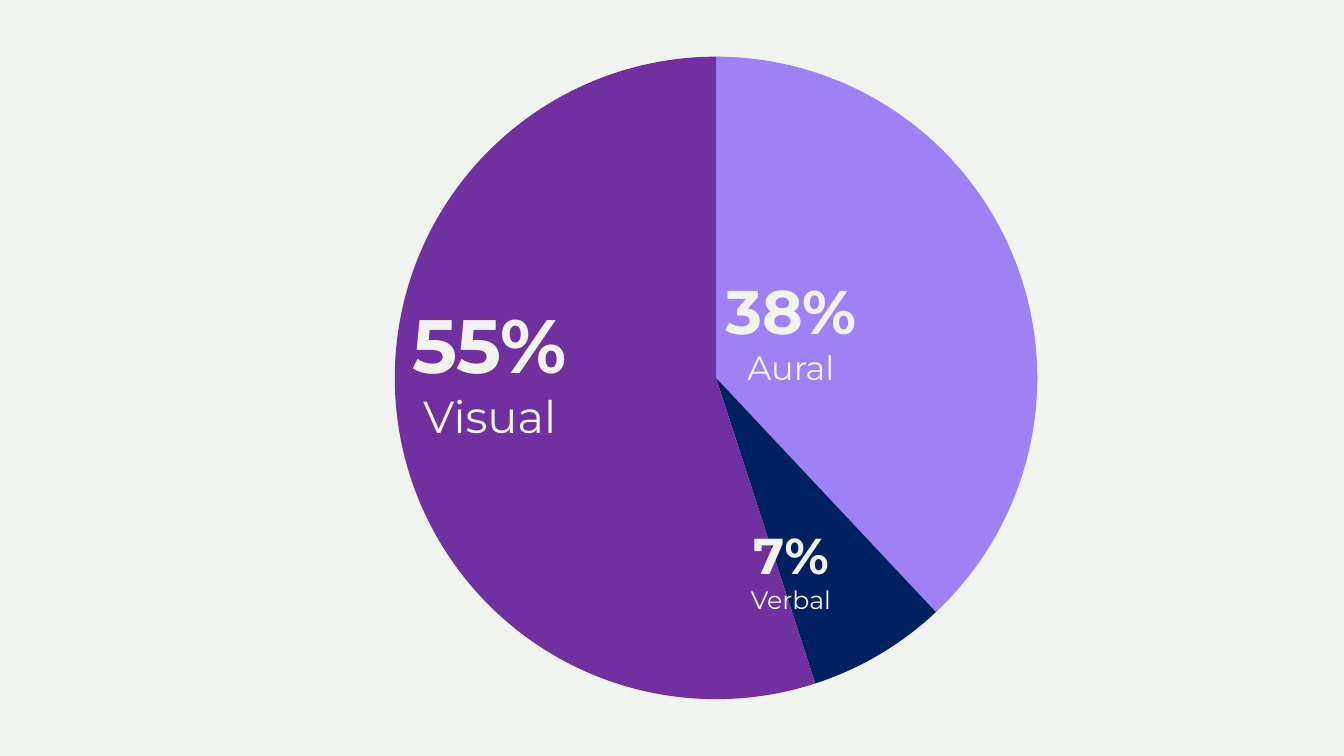
from dataclasses import dataclass

from lxml.etree import SubElement
from pptx import Presentation
from pptx.chart.data import CategoryChartData
from pptx.dml.color import RGBColor
from pptx.enum.chart import XL_CHART_TYPE
from pptx.enum.text import MSO_AUTO_SIZE, PP_ALIGN
from pptx.oxml.ns import qn
from pptx.util import Pt


@dataclass(frozen=True)
class Theme:
    light: str = "F0F3EE"
    text: str = "000000"
    aural: str = "9F81F6"
    verbal: str = "002060"
    visual: str = "7030A0"
    font: str = "Montserrat"
    chart_font: str = "Calibri"
    chart_size: int = 10
    large: tuple = (54, 32)
    medium: tuple = (44, 24)
    small: tuple = (36, 18)


class SlideBuilder:
    def __init__(self, slide, theme):
        self.s = slide
        self.theme = theme

    def background(self, color):
        fill = self.s.background.fill
        fill.solid()
        fill.fore_color.rgb = RGBColor.from_string(color)

    def pie(self, left, top, width, height, diameter, values, colors):
        """Add a pie of the given diameter, centred in its frame."""
        data = CategoryChartData()
        data.categories = [str(i + 1) for i in range(len(values))]
        data.add_series("Series 1", values)
        chart = self.s.shapes.add_chart(
            XL_CHART_TYPE.PIE, Pt(left), Pt(top), Pt(width), Pt(height), data).chart
        chart.has_title = False
        chart.has_legend = False
        chart.font.name = self.theme.chart_font
        chart.font.size = Pt(self.theme.chart_size)
        chart.font.color.rgb = RGBColor.from_string(self.theme.text)
        plot = chart.plots[0]
        plot.vary_by_categories = True
        for i, color in enumerate(colors):
            fmt = plot.series[0].points[i].format
            fmt.fill.solid()
            fmt.fill.fore_color.rgb = RGBColor.from_string(color)
            fmt.line.fill.background()
        self.centre_plot(chart, diameter / width, diameter / height)

    def centre_plot(self, chart, w, h):
        """Fix the plot area to the fractions w and h of the frame."""
        area = chart.element.find(".//" + qn("c:plotArea"))
        layout = area.find(qn("c:layout"))
        if layout is None:
            layout = SubElement(area, qn("c:layout"))
            area.insert(0, layout)
        manual = SubElement(layout, qn("c:manualLayout"))
        settings = [("layoutTarget", "inner"), ("xMode", "edge"), ("yMode", "edge"),
                    ("x", (1 - w) / 2), ("y", (1 - h) / 2), ("w", w), ("h", h)]
        for tag, val in settings:
            SubElement(manual, qn("c:" + tag)).set("val", str(val))

    def label(self, left, top, width, height, share, channel, sizes):
        tf = self.s.shapes.add_textbox(Pt(left), Pt(top), Pt(width), Pt(height)).text_frame
        tf.word_wrap = True
        tf.auto_size = MSO_AUTO_SIZE.SHAPE_TO_FIT_TEXT
        lines = [(tf.paragraphs[0], share, True), (tf.add_paragraph(), channel, False)]
        for (p, text, bold), size in zip(lines, sizes):
            p.alignment = PP_ALIGN.CENTER
            r = p.add_run()
            r.text = text
            r.font.name = self.theme.font
            r.font.size = Pt(size)
            r.font.bold = bold
            r.font.color.rgb = RGBColor.from_string(self.theme.light)


def main():
    prs = Presentation()
    prs.slide_width, prs.slide_height = Pt(960), Pt(540)
    theme = Theme()
    b = SlideBuilder(prs.slides.add_slide(prs.slide_layouts[6]), theme)
    b.background(theme.light)
    b.pie(106.5, 30.5, 810, 479, 459, (38, 7, 55),
          (theme.aural, theme.verbal, theme.visual))
    b.label(278.5, 209, 142.5, 111.5, "55%", "Visual", theme.large)
    b.label(502, 191.5, 126, 90, "38%", "Aural", theme.medium)
    b.label(502, 371, 126, 72.5, "7%", "Verbal", theme.small)
    prs.save("out.pptx")


if __name__ == "__main__":
    main()
